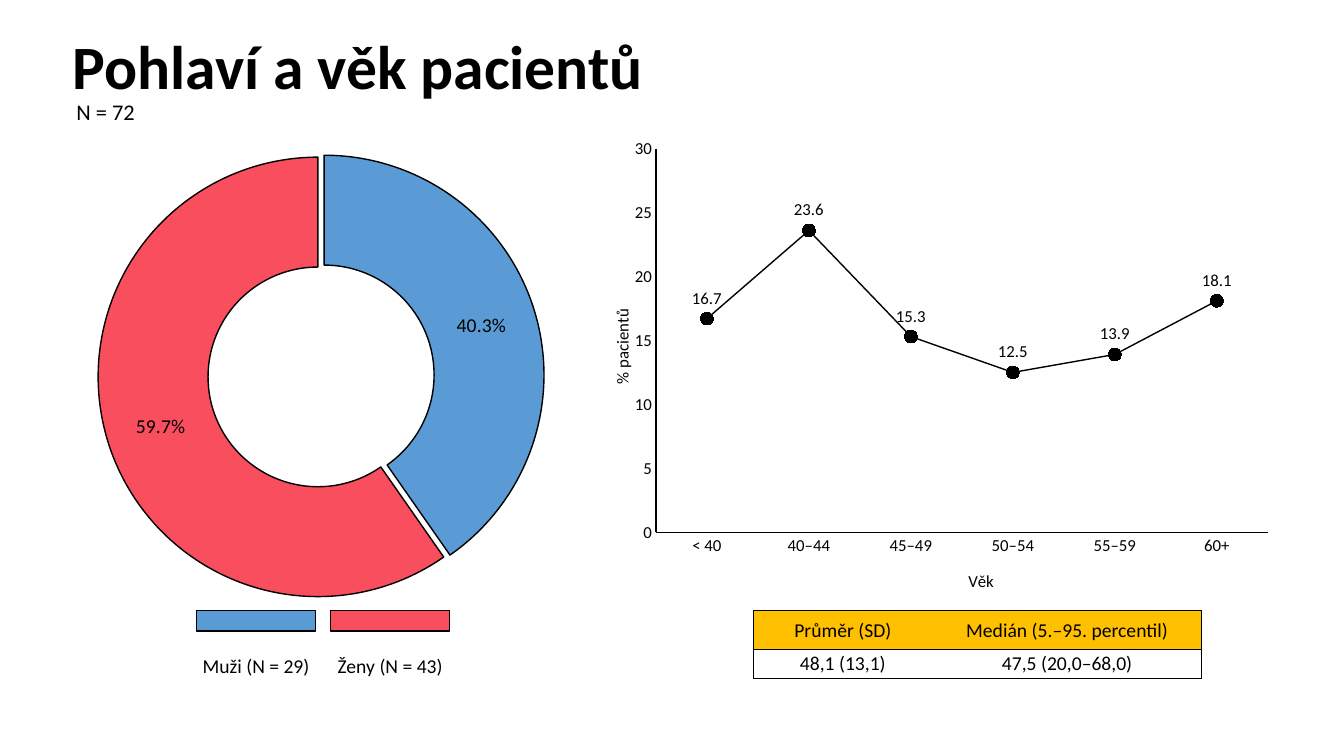
from lxml import etree
from pptx import Presentation
from pptx.chart.data import CategoryChartData
from pptx.dml.color import RGBColor
from pptx.enum.chart import (XL_CHART_TYPE, XL_LABEL_POSITION,
                             XL_MARKER_STYLE, XL_TICK_MARK)
from pptx.enum.shapes import MSO_SHAPE
from pptx.enum.text import MSO_ANCHOR, PP_ALIGN
from pptx.oxml.ns import qn
from pptx.util import Inches, Pt

COLORS = {"black": "000000", "white": "FFFFFF", "men": "5B9BD5",
          "women": "F84E5E", "header": "FFC000"}
FONT = "Calibri"
CENTER = PP_ALIGN.CENTER
LEFT = PP_ALIGN.LEFT
MIDDLE = MSO_ANCHOR.MIDDLE
NO_TICK = XL_TICK_MARK.NONE
ABOVE = XL_LABEL_POSITION.ABOVE
CIRCLE = XL_MARKER_STYLE.CIRCLE
LINE_CHART = XL_CHART_TYPE.LINE_MARKERS
DOUGHNUT = XL_CHART_TYPE.DOUGHNUT
RECTANGLE = MSO_SHAPE.RECTANGLE


def color(name):
    return RGBColor.from_string(COLORS[name])


def style_font(font, size, bold=False):
    font.name = FONT
    font.size = Pt(size)
    font.bold = bold
    font.color.rgb = color("black")


def style_line(line):
    line.color.rgb = color("black")
    line.width = Pt(1)


def fill_solid(fill, name):
    fill.solid()
    fill.fore_color.rgb = color(name)


def set_layout(parent, index, **values):
    for old in parent.findall(qn("c:layout")):
        parent.remove(old)
    layout = etree.Element(qn("c:layout"))
    manual = etree.SubElement(layout, qn("c:manualLayout"))
    if "w" in values:
        etree.SubElement(manual, qn("c:layoutTarget")).set("val", "inner")
    for key in ("x", "y"):
        etree.SubElement(manual, qn(f"c:{key}Mode")).set("val", "edge")
    for key, value in values.items():
        etree.SubElement(manual, qn(f"c:{key}")).set("val", str(value))
    parent.insert(index, layout)


def add_chart(slide, box, chart_type, categories, values, font_size):
    data = CategoryChartData()
    data.categories = categories
    data.add_series("Series 1", values)
    chart = slide.shapes.add_chart(
        chart_type, *map(Inches, box), data).chart
    chart.has_legend = False
    chart.has_title = False
    style_font(chart.font, font_size)
    return chart


def add_label(slide, box, text, size, align):
    label = slide.shapes.add_textbox(*map(Inches, box))
    frame = label.text_frame
    frame.word_wrap = True
    frame.vertical_anchor = MIDDLE
    paragraph = frame.paragraphs[0]
    paragraph.text = text
    paragraph.alignment = align
    style_font(paragraph.font, size)


def add_heading(slide, left, top, width, height):
    title = slide.shapes.title
    title.left, title.top = Inches(left), Inches(top)
    title.width, title.height = Inches(width), Inches(height)
    frame = title.text_frame
    frame.text = "Pohlaví a věk pacientů"
    frame.vertical_anchor = MIDDLE
    paragraph = frame.paragraphs[0]
    paragraph.alignment = LEFT
    paragraph.line_spacing = 0.9
    style_font(paragraph.font, 44, True)
    add_label(slide, (left + 0.04, top + 0.7, 1, 0.42), "N = 72", 16, LEFT)


def add_sex_chart(slide, box):
    chart = add_chart(slide, box, DOUGHNUT, ["1", "2"], [40.3, 59.7], 10)
    set_layout(chart._chartSpace.chart.plotArea, 0,
               x=0.07, y=0.03, w=0.86, h=0.94)
    plot = chart.plots[0]
    plot.vary_by_categories = True
    plot._element.find(qn("c:holeSize")).set("val", "49")
    series = plot.series[0]
    for index, name in enumerate(("men", "women")):
        point_format = series.points[index].format
        fill_solid(point_format.fill, name)
        style_line(point_format.line)
    for point in series._element.findall(qn("c:dPt")):
        explosion = etree.Element(qn("c:explosion"))
        explosion.set("val", "3")
        point.find(qn("c:spPr")).addprevious(explosion)
    labels = series.data_labels
    labels.show_value = False
    labels.show_percentage = True
    labels.number_format = "0.0%"
    labels.number_format_is_linked = False
    style_font(labels.font, 14)


def add_sex_legend(slide, left, top):
    entries = (("men", "Muži (N = 29)"), ("women", "Ženy (N = 43)"))
    for index, (name, text) in enumerate(entries):
        swatch_left = left + index * 1.33
        swatch = slide.shapes.add_shape(
            RECTANGLE, Inches(swatch_left), Inches(top),
            Inches(1.18), Inches(0.2))
        swatch.shadow.inherit = False
        fill_solid(swatch.fill, name)
        style_line(swatch.line)
        add_label(slide, (swatch_left - 0.08, top + 0.34, 1.34, 0.4),
                  text, 14, CENTER)


def style_axis(axis, title, x, y):
    axis.has_major_gridlines = False
    axis.major_tick_mark = NO_TICK
    axis.minor_tick_mark = NO_TICK
    style_font(axis.tick_labels.font, 12)
    style_line(axis.format.line)
    frame = axis.axis_title.text_frame
    frame.text = title
    style_font(frame.paragraphs[0].font, 12)
    set_layout(axis.axis_title._element, 1, x=x, y=y)
    return frame


def add_age_chart(slide, box):
    chart = add_chart(
        slide, box, LINE_CHART,
        ["< 40", "40–44", "45–49", "50–54", "55–59", "60+"],
        [16.7, 23.6, 15.3, 12.5, 13.9, 18.1], 12)
    set_layout(chart._chartSpace.chart.plotArea, 0,
               x=0.08, y=0.04, w=0.89, h=0.78)
    style_axis(chart.category_axis, "Věk", 0.53, 0.89)
    value_axis = chart.value_axis
    frame = style_axis(value_axis, "% pacientů", 0.01, 0.36)
    frame._txBody.bodyPr.set("rot", "-5400000")
    value_axis.minimum_scale = 0
    value_axis.maximum_scale = 30
    value_axis.major_unit = 5
    value_axis.tick_labels.number_format = "#,##0"
    value_axis.tick_labels.number_format_is_linked = False
    plot = chart.plots[0]
    plot.vary_by_categories = False
    series = plot.series[0]
    series.smooth = False
    style_line(series.format.line)
    series.marker.style = CIRCLE
    series.marker.size = 9
    fill_solid(series.marker.format.fill, "black")
    style_line(series.marker.format.line)
    labels = series.data_labels
    labels.show_value = True
    labels.position = ABOVE
    labels.number_format = "0.0"
    labels.number_format_is_linked = False
    style_font(labels.font, 12)


def set_borders(cell, visible_sides):
    properties = cell._tc.get_or_add_tcPr()
    for side in "LRTB":
        line = etree.SubElement(properties, qn(f"a:ln{side}"))
        if side in visible_sides:
            line.set("w", str(Pt(1)))
            fill = etree.SubElement(line, qn("a:solidFill"))
            etree.SubElement(fill, qn("a:srgbClr")).set("val", COLORS["black"])
        else:
            etree.SubElement(line, qn("a:noFill"))


def add_age_table(slide, box):
    rows = (("Průměr (SD)", "Medián (5.–95. percentil)"),
            ("48,1 (13,1)", "47,5 (20,0–68,0)"))
    table = slide.shapes.add_table(2, 2, *map(Inches, box)).table
    for column, width in zip(table.columns, (1.78, 2.67)):
        column.width = Inches(width)
    for row, height in zip(table.rows, (0.38, 0.29)):
        row.height = Inches(height)
    for row_index, texts in enumerate(rows):
        for column_index, text in enumerate(texts):
            cell = table.cell(row_index, column_index)
            set_borders(cell, "TB" + "LR"[column_index])
            fill_solid(cell.fill, ("header", "white")[row_index])
            cell.margin_left = cell.margin_right = Inches(0.01)
            cell.margin_top, cell.margin_bottom = Inches(0.01), 0
            cell.vertical_anchor = MIDDLE
            cell.text = text
            paragraph = cell.text_frame.paragraphs[0]
            paragraph.alignment = CENTER
            style_font(paragraph.font, 14)


def main():
    presentation = Presentation()
    presentation.slide_width = Inches(13.33)
    presentation.slide_height = Inches(7.5)
    slide = presentation.slides.add_slide(presentation.slide_layouts[5])
    add_heading(slide, 0.62, 0.2, 12.09, 0.98)
    add_age_chart(slide, (5.96, 1.28, 6.82, 4.88))
    add_age_table(slide, (7.47, 6.06, 4.45, 0.67))
    add_sex_chart(slide, (0.65, 1.39, 5.07, 4.68))
    add_sex_legend(slide, 1.95, 6.06)
    presentation.save("out.pptx")


if __name__ == "__main__":
    main()
